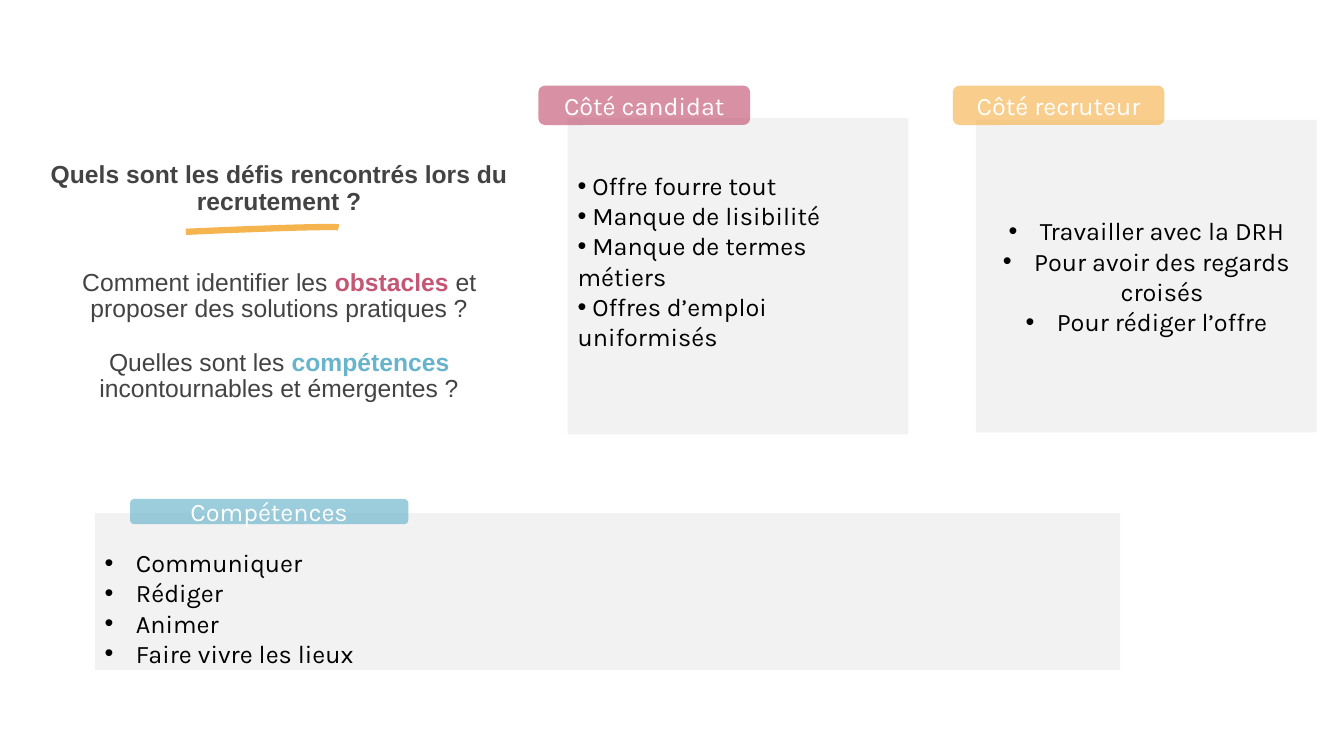
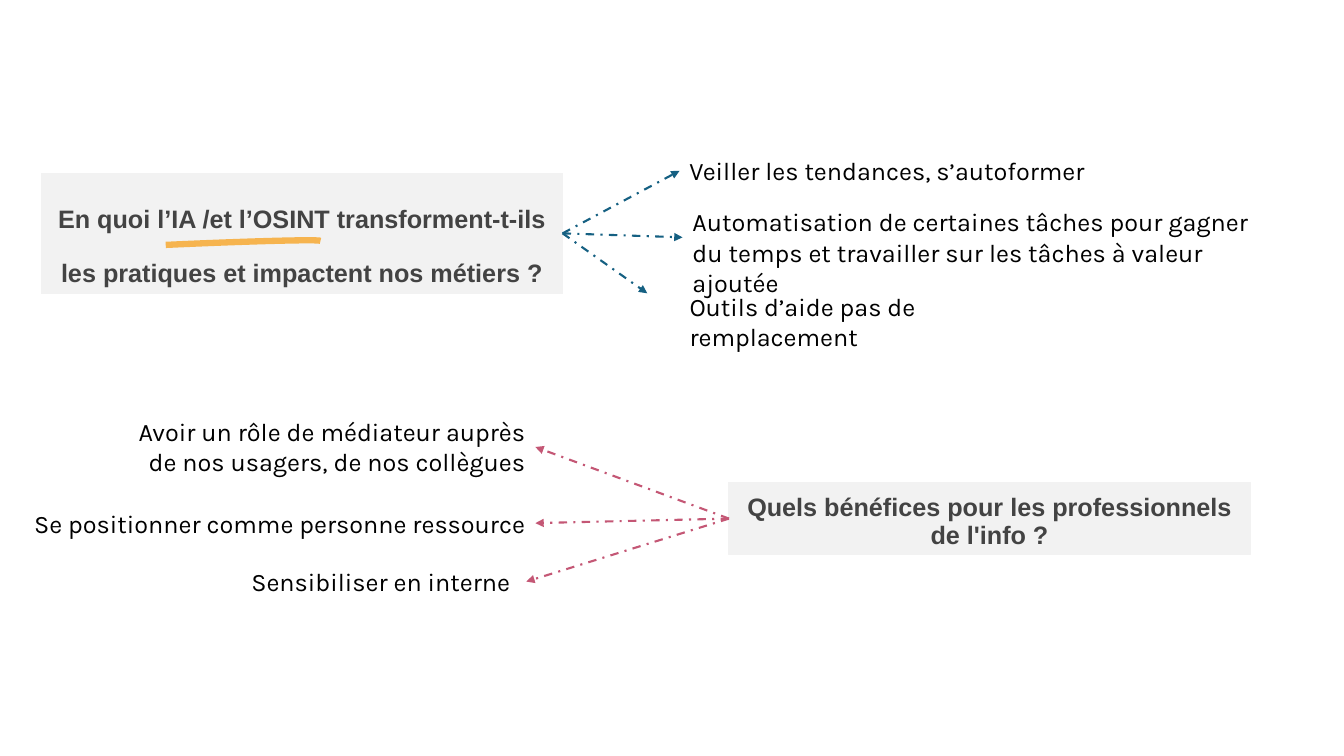
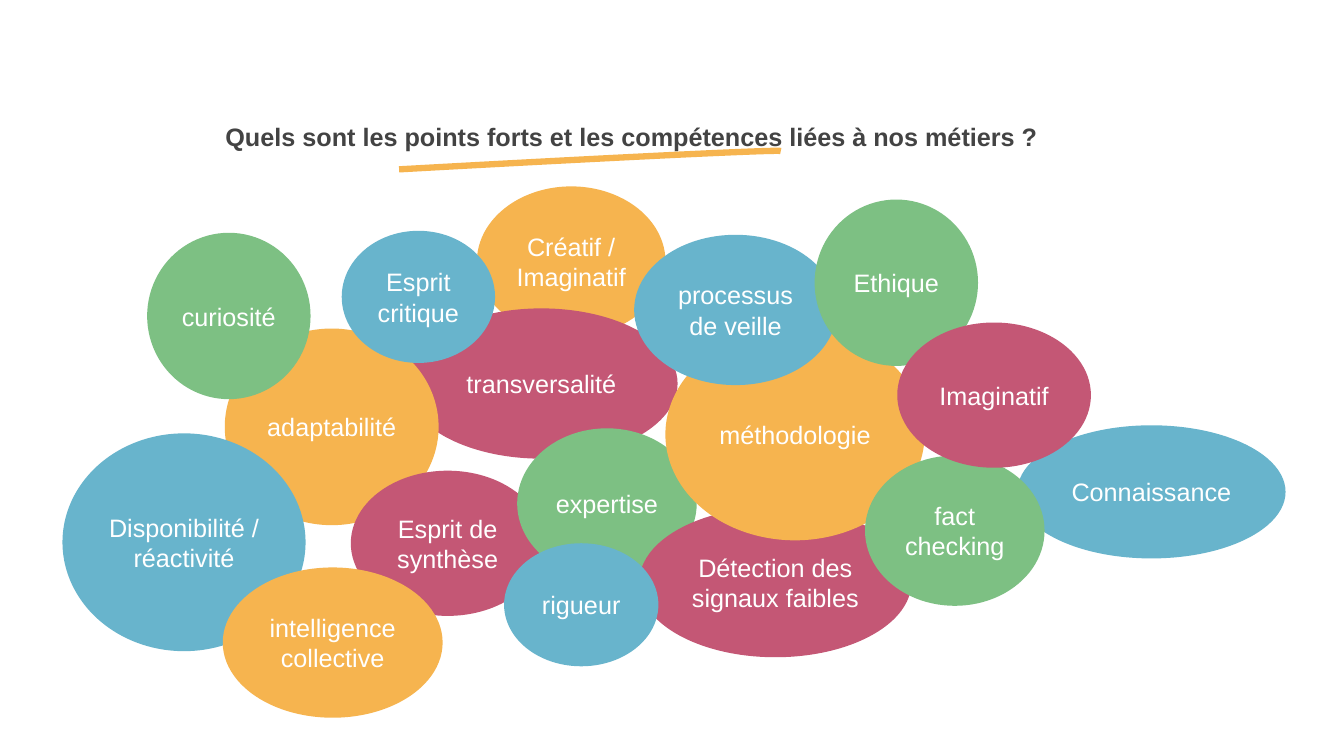
from dataclasses import dataclass

from lxml import etree
from pptx import Presentation
from pptx.dml.color import RGBColor
from pptx.enum.dml import MSO_LINE
from pptx.enum.shapes import MSO_CONNECTOR, MSO_SHAPE
from pptx.enum.text import MSO_ANCHOR, MSO_AUTO_SIZE, PP_ALIGN
from pptx.oxml.ns import qn
from pptx.util import Inches, Pt

RECT, ROUNDED, ELLIPSE, ARC = (MSO_SHAPE.RECTANGLE, MSO_SHAPE.ROUNDED_RECTANGLE,
                               MSO_SHAPE.OVAL, MSO_SHAPE.ARC)
STRAIGHT, DASH_DOT = MSO_CONNECTOR.STRAIGHT, MSO_LINE.DASH_DOT
LEFT, CENTER, RIGHT = PP_ALIGN.LEFT, PP_ALIGN.CENTER, PP_ALIGN.RIGHT
TOP, MIDDLE, BOTTOM = MSO_ANCHOR.TOP, MSO_ANCHOR.MIDDLE, MSO_ANCHOR.BOTTOM
NO_AUTOFIT = MSO_AUTO_SIZE.NONE
LEFT_SIDE, RIGHT_SIDE = 1, 3
TITLE_ONLY = 5


@dataclass(frozen=True)
class Theme:
    heading_font: str = "Arial"
    body_font: str = "Karla"
    size: float = 18
    intro_size: float = 17.6
    line_spacing: float = 0.9
    heading: str = "434343"
    text: str = "000000"
    white: str = "FFFFFF"
    panel: str = "F2F2F2"
    pink: str = "C45775"
    orange: str = "F6B44F"
    blue: str = "68B4CC"
    green: str = "7DC083"
    navy: str = "156082"
    label_opacity: int = 66


THEME = Theme()
HEADING = {"name": THEME.heading_font, "size": Pt(THEME.size),
           "bold": True, "color": THEME.heading}
BODY = {"name": THEME.body_font, "size": Pt(THEME.size), "color": THEME.text}
LABEL = {**BODY, "color": THEME.white}
BUBBLE = {**LABEL, "name": THEME.heading_font}
HEADING_LAYOUT = {"alignment": CENTER, "line_spacing": THEME.line_spacing}


def rgb(color):
    return RGBColor.from_string(color)


def box(bounds):
    return [Inches(length) for length in bounds]


def apply(target, values):
    for name, value in values.items():
        if name == "color":
            target.color.rgb = rgb(value)
        else:
            setattr(target, name, value)


def add_bullet(paragraph, hanging):
    properties = paragraph._p.get_or_add_pPr()
    properties.set("marL", str(Inches(hanging)))
    properties.set("indent", str(-Inches(hanging)))
    etree.SubElement(properties, qn("a:buFont")).set("typeface", "Arial")
    etree.SubElement(properties, qn("a:buChar")).set("char", "•")


def write(shape, paragraphs, font, layout, anchor=MIDDLE, gaps=(), hanging=None, insets=None):
    """Fill a shape; a paragraph is a string or a list of (text, font changes) runs."""
    frame = shape.text_frame
    apply(frame, {"word_wrap": True, "auto_size": NO_AUTOFIT,
                  "vertical_anchor": anchor, **(insets or {})})
    for index, content in enumerate(paragraphs):
        paragraph = frame.add_paragraph() if index else frame.paragraphs[0]
        apply(paragraph, layout)
        paragraph.space_before = Pt(gaps[index - 1] if index and gaps else 0)
        if hanging is not None:
            add_bullet(paragraph, hanging)
        for text, changes in [(content, {})] if isinstance(content, str) else content:
            run = paragraph.add_run()
            run.text = text
            apply(run.font, {**font, **changes})


def paint(shape, fill, outline=None, width=0.75):
    shape.fill.solid()
    shape.fill.fore_color.rgb = rgb(fill)
    if outline:
        shape.line.color.rgb = rgb(outline)
        shape.line.width = Pt(width)
    else:
        shape.line.fill.background()


def add_figure(slide, kind, bounds, fill, outline=None, width=0.75):
    figure = slide.shapes.add_shape(kind, *box(bounds))
    figure.shadow.inherit = False
    paint(figure, fill, outline, width)
    return figure


def add_title(slide, bounds, paragraphs, font=HEADING, gaps=()):
    title = slide.shapes.title
    title.left, title.top, title.width, title.height = box(bounds)
    write(title, paragraphs, font, HEADING_LAYOUT, BOTTOM, gaps)
    return title


def add_underline(slide, bounds, rotation):
    stroke = slide.shapes.add_shape(ARC, *box(bounds))
    stroke.shadow.inherit = False
    stroke.fill.background()
    stroke.line.color.rgb = rgb(THEME.orange)
    stroke.line.width = Pt(4.5)
    stroke.rotation = rotation


def add_card(slide, bounds, items, label_bounds, label, color, alignment, hanging, insets=None):
    """Draw a grey list panel with a translucent label over its top edge."""
    panel = add_figure(slide, RECT, bounds, THEME.panel)
    write(panel, items, BODY, {"alignment": alignment}, hanging=hanging, insets=insets)
    tag = add_figure(slide, ROUNDED, label_bounds, color)
    tint = tag.fill._xPr.find(qn("a:solidFill"))[0]
    etree.SubElement(tint, qn("a:alpha")).set("val", str(THEME.label_opacity * 1000))
    write(tag, [label], LABEL, {"alignment": CENTER})


def add_answer(slide, bounds, text, alignment, anchor=TOP):
    answer = slide.shapes.add_textbox(*box(bounds))
    write(answer, [text], BODY, {"alignment": alignment}, anchor)
    return answer


def add_arrow(slide, source, source_side, target, color):
    """Lead from a side of a box to the facing side of a text box, or to a point."""
    arrow = slide.shapes.add_connector(STRAIGHT, 0, 0, 0, 0)
    arrow.begin_connect(source, source_side)
    if isinstance(target, tuple):
        arrow.end_x, arrow.end_y = box(target)
    else:
        arrow.end_connect(target, LEFT_SIDE + RIGHT_SIDE - source_side)
    apply(arrow.line, {"color": color, "width": Pt(1.5), "dash_style": DASH_DOT})
    etree.SubElement(arrow.line._get_or_add_ln(), qn("a:tailEnd")).set("type", "triangle")
    etree.SubElement(arrow._element.spPr, qn("a:effectLst"))


def build_challenges(slide):
    plain = {"bold": False}
    add_title(slide, (0.33, 1.05, 4.88, 3), [
        "Quels sont les défis rencontrés lors du recrutement ?",
        [("Comment identifier les ", plain), ("obstacles", {"color": THEME.pink}),
         (" et proposer des solutions pratiques ?", plain)],
        [("Quelles sont les ", plain), ("compétences", {"color": THEME.blue}),
         (" incontournables et émergentes ?", plain)],
    ], {**HEADING, "size": Pt(THEME.intro_size)}, gaps=(39, 19))
    add_underline(slide, (0.33, 2.3, 3.03, 0.05), 357.4)
    add_card(slide, (5.63, 1.17, 3.38, 3.14),
             [" Offre fourre tout", " Manque de lisibilité",
              " Manque de termes métiers", " Offres d’emploi uniformisés"],
             (5.34, 0.85, 2.1, 0.39), "Côté candidat", THEME.pink,
             LEFT, 0, {"margin_bottom": Inches(0.35)})
    add_card(slide, (9.68, 1.19, 3.38, 3.1),
             ["Travailler avec la DRH", "Pour avoir des regards croisés",
              "Pour rédiger l’offre"],
             (9.45, 0.85, 2.1, 0.39), "Côté recruteur", THEME.orange, CENTER, 0.31)
    add_card(slide, (0.94, 5.09, 10.17, 1.56),
             ["Communiquer", "Rédiger", "Animer", "Faire vivre les lieux"],
             (1.29, 4.95, 2.76, 0.25), "Compétences", THEME.blue,
             LEFT, 0.31, {"margin_top": Inches(0.32), "margin_bottom": 0})


def build_transformation(slide):
    impact = add_title(slide, (0.41, 1.72, 5.17, 1.19),
                       ["En quoi l’IA /et l’OSINT transforment-t-ils",
                        "les pratiques et impactent nos métiers ?"], gaps=(19.5,))
    paint(impact, THEME.panel, THEME.panel)
    add_underline(slide, (0.11, 2.43, 3.07, 0.06), 357.4)
    trends = add_answer(slide, (6.74, 1.38, 6.86, 0.63),
                        "Veiller les tendances, s’autoformer", LEFT, MIDDLE)
    automation = add_answer(slide, (6.77, 2, 5.86, 0.71),
                            "Automatisation de certaines tâches pour gagner du temps "
                            "et travailler sur les tâches à valeur ajoutée", LEFT)
    add_answer(slide, (6.74, 2.84, 4.01, 0.4), "Outils d’aide pas de remplacement", LEFT)
    for target in (trends, automation, (6.42, 2.91)):
        add_arrow(slide, impact, RIGHT_SIDE, target, THEME.navy)

    benefits = add_figure(slide, RECT, (7.23, 4.79, 5.17, 0.71), THEME.panel, THEME.panel)
    write(benefits, ["Quels bénéfices pour les professionnels de l'info ?"],
          HEADING, HEADING_LAYOUT, BOTTOM)
    for bounds, text in (
        ((1.02, 4.08, 4.29, 0.71),
         "Avoir un rôle de médiateur auprès de nos usagers, de nos collègues"),
        ((-0.06, 4.99, 5.37, 0.4), "Se positionner comme personne ressource"),
        ((1.36, 5.57, 3.86, 0.4), "Sensibiliser en interne "),
    ):
        answer = add_answer(slide, bounds, text, RIGHT)
        add_arrow(slide, benefits, LEFT_SIDE, answer, THEME.pink)


def build_strengths(slide):
    add_title(slide, (0.99, 0.9, 10.55, 0.66),
              ["Quels sont les points forts et les compétences liées à nos métiers ?"])
    add_underline(slide, (0.17, 1.68, 7.58, 0.06), 356.8)
    for skill, color, bounds in (
        ("Connaissance", THEME.blue, (10.1, 4.23, 2.64, 1.3)),
        ("Créatif / Imaginatif", THEME.orange, (4.74, 1.86, 1.85, 1.47)),
        ("transversalité", THEME.pink, (4.03, 3.07, 2.68, 1.47)),
        ("adaptabilité", THEME.orange, (2.24, 3.27, 2.1, 1.93)),
        ("curiosité", THEME.green, (1.47, 2.32, 1.6, 1.63)),
        ("Esprit de synthèse", THEME.pink, (3.49, 4.68, 1.9, 1.42)),
        ("Disponibilité / réactivité", THEME.blue, (0.63, 4.31, 2.39, 2.14)),
        ("intelligence collective", THEME.orange, (2.22, 5.64, 2.16, 1.47)),
        ("expertise", THEME.green, (5.14, 4.26, 1.76, 1.47)),
        ("Détection des signaux faibles", THEME.pink, (6.35, 5.04, 2.68, 1.47)),
        ("rigueur", THEME.blue, (5.01, 5.4, 1.51, 1.2)),
        ("méthodologie", THEME.orange, (6.61, 3.27, 2.55, 2.08)),
        ("processus de veille", THEME.blue, (6.3, 2.34, 1.99, 1.47)),
        ("fact checking", THEME.green, (8.59, 4.53, 1.76, 1.47)),
        ("Ethique", THEME.green, (8.09, 1.99, 1.6, 1.63)),
        ("Imaginatif", THEME.pink, (8.91, 3.21, 1.9, 1.42)),
        ("Esprit critique", THEME.blue, (3.4, 2.3, 1.5, 1.29)),
    ):
        bubble = add_figure(slide, ELLIPSE, bounds, color, color, 1.5)
        write(bubble, [skill], BUBBLE, {"alignment": CENTER})


def main():
    deck = Presentation()
    deck.slide_width, deck.slide_height = Inches(13.33), Inches(7.5)
    for build in (build_challenges, build_transformation, build_strengths):
        build(deck.slides.add_slide(deck.slide_layouts[TITLE_ONLY]))
    deck.save("out.pptx")


if __name__ == "__main__":
    main()
